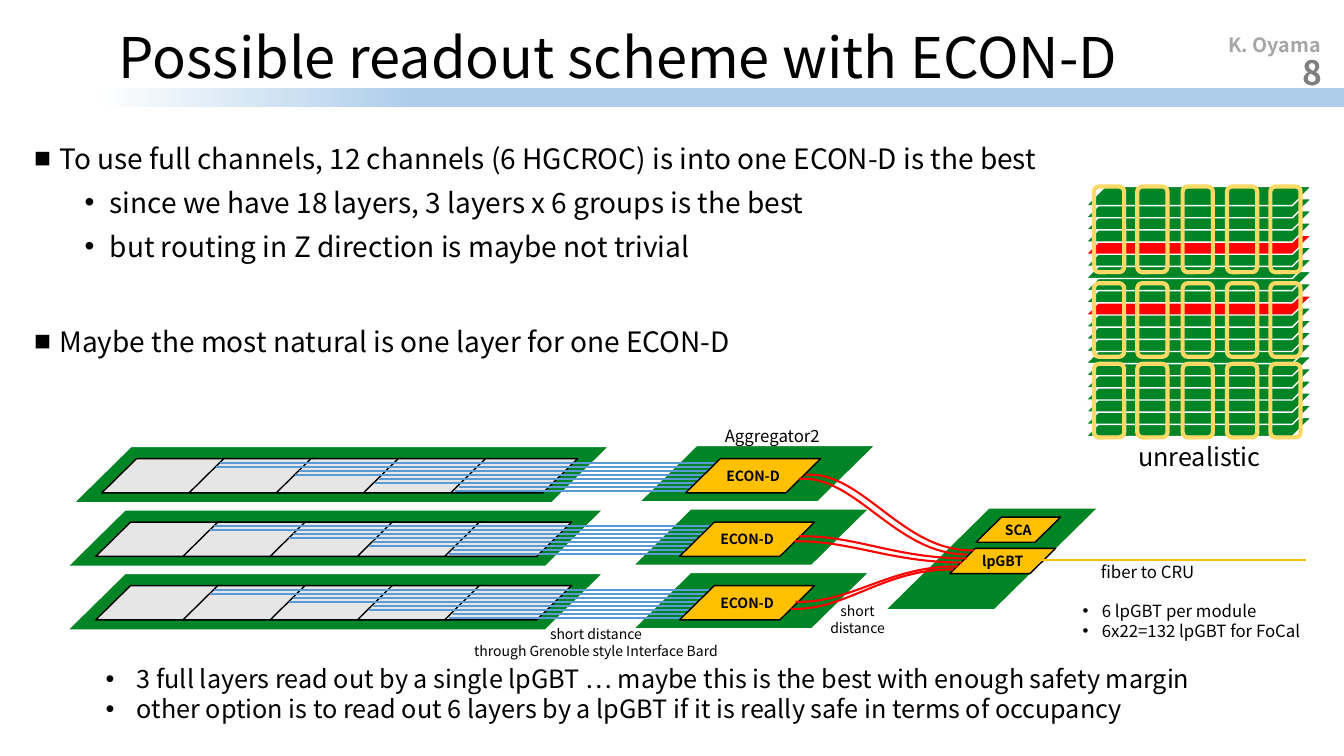
"""Build the ECON-D readout scheme slide."""
import pptx
import pptx.util
import pptx.dml.color
import pptx.enum.shapes
import pptx.enum.text
import lxml.etree

Inches, Pt = pptx.util.Inches, pptx.util.Pt
RGBColor = pptx.dml.color.RGBColor
Kind = pptx.enum.shapes.MSO_SHAPE
Align = pptx.enum.text.PP_ALIGN
Anchor = pptx.enum.text.MSO_ANCHOR
Fit = pptx.enum.text.MSO_AUTO_SIZE

FONT = "Noto Sans CJK JP"
BLACK = RGBColor(0, 0, 0)
WHITE = RGBColor(255, 255, 255)
GREEN = RGBColor(0x00, 0x85, 0x26)
RED = RGBColor(255, 0, 0)
GOLD = RGBColor(0xFF, 0xC0, 0x00)
PALE = RGBColor(0xFF, 0xD9, 0x66)
GREY = RGBColor(0xE7, 0xE6, 0xE6)
BLUE = RGBColor(0x5B, 0x9B, 0xD5)
SKY = RGBColor(0xAD, 0xCD, 0xEA)
SILVER = RGBColor(0xA6, 0xA6, 0xA6)
SLATE = RGBColor(0x80, 0x80, 0x80)

TITLE = "Possible readout scheme with ECON-D"
POINTS = [
    ("To use full channels, 12 channels (6 HGCROC) is into one ECON-D is the best", 0, 0),
    ("since we have 18 layers, 3 layers x 6 groups is the best", 1, 5),
    ("but routing in Z direction is maybe not trivial", 1, 5),
    ("Maybe the most natural is one layer for one ECON-D", 0, 41.5),
]
LEVELS = [("■", 0.25), ("•", 0.75)]
CORNER = [
    ("K. Oyama", (11.39, 0.29, 1.81, 0.31), 14, SILVER),
    ("8", (10.21, 0.52, 3, 0.4), 24, SLATE),
]
LABELS = [
    (["unrealistic"], (11.19, 4.33, 1.42, 0.4), 18, Align.LEFT),
    (["Aggregator2"], (7.09, 4.17, 1.15, 0.3), 12, Align.LEFT),
    (["fiber to CRU"], (10.82, 5.52, 1.16, 0.3), 12, Align.LEFT),
    (["short distance", "through Grenoble style Interface Bard"],
     (4.57, 6.16, 2.68, 0.44), 10, Align.CENTER),
    (["short", "distance"], (8.13, 5.93, 0.75, 0.44), 10, Align.CENTER),
]
LISTS = [
    (["3 full layers read out by a single lpGBT … maybe this is the best with enough safety margin",
      "other option is to read out 6 layers by a lpGBT if it is really safe in terms of occupancy"],
     (0.95, 6.53, 11.14, 0.71), 18, 0.31),
    (["6 lpGBT per module", "6x22=132 lpGBT for FoCal"],
     (10.64, 5.91, 2.44, 0.5), 12, 0.19),
]
PLATES, HOT = 20, (10, 15)
LOOP_X = (10.85, 11.28, 11.73, 12.17, 12.6)
LOOP_Y = [(1.85, 0.85), (2.81, 0.73), (3.61, 0.73)]
ROWS = [(0, 0), (-0.06, 0.63), (-0.06, 1.26)]
CELLS, WIRES = 5, 8
CURVES = [
    ((7.99, 4.71), (8.56, 4.67), (8.95, 5.48), (9.66, 5.46)),
    ((7.93, 4.75), (8.49, 4.71), (8.89, 5.51), (9.6, 5.5)),
    ((7.93, 5.32), (8.49, 5.31), (8.88, 5.54), (9.59, 5.54)),
    ((7.89, 5.97), (8.44, 5.99), (8.82, 5.61), (9.5, 5.62)),
    ((7.88, 5.37), (8.44, 5.36), (8.83, 5.58), (9.54, 5.58)),
    ((7.85, 6.04), (8.39, 6.06), (8.77, 5.64), (9.45, 5.65)),
]


def write(para, text, size, color=BLACK, bold=False):
    """Add one run to a paragraph."""
    run = para.add_run()
    run.text = text
    font = run.font
    font.name, font.size, font.bold = FONT, Pt(size), bold
    font.color.rgb = color


def bullet(para, mark, left, hang):
    """Give a paragraph a bullet and a hanging indent."""
    props = para._p.get_or_add_pPr()
    props.set("marL", str(Inches(left)))
    props.set("indent", str(-Inches(hang)))
    face = lxml.etree.SubElement(props, pptx.oxml.ns.qn("a:buFont"))
    face.set("typeface", "Arial")
    lxml.etree.SubElement(props, pptx.oxml.ns.qn("a:buChar")).set("char", mark)


def lines(frame, count):
    """Return the first paragraphs of a frame, adding those it lacks."""
    return [frame.paragraphs[0]] + [frame.add_paragraph() for _ in range(count - 1)]


def textbox(home, box, wrap=False):
    """Add a text box and return its frame."""
    frame = home.add_textbox(*map(Inches, box)).text_frame
    frame.word_wrap = wrap
    frame.auto_size = Fit.NONE if wrap else Fit.SHAPE_TO_FIT_TEXT
    return frame


def block(home, kind, box, fill, edge, width=1):
    """Add a preset shape with flat fill and line."""
    shape = home.add_shape(kind, *map(Inches, box))
    shape.shadow.inherit = False
    if fill is None:
        shape.fill.background()
    else:
        shape.fill.solid()
        shape.fill.fore_color.rgb = fill
    shape.line.color.rgb = edge
    shape.line.width = Pt(width)
    return shape


def slant(home, box, fill, edge=WHITE):
    """Add a leaning board."""
    shape = block(home, Kind.PARALLELOGRAM, box, fill, edge)
    shape.adjustments[0] = 1.016
    return shape


def chip(home, box, name):
    """Add a named gold chip."""
    frame = slant(home, box, GOLD, BLACK).text_frame
    frame.margin_left = frame.margin_right = frame.margin_top = frame.margin_bottom = 0
    frame.word_wrap = False
    frame.vertical_anchor = Anchor.MIDDLE
    para = frame.paragraphs[0]
    para.alignment = Align.CENTER
    write(para, name, 10, bold=True)


def wire(home, left, right, y, color):
    """Add a level line."""
    line = home.add_connector(pptx.enum.shapes.MSO_CONNECTOR.STRAIGHT,
                              Inches(left), Inches(y), Inches(right), Inches(y))
    line.line.color.rgb = color
    line.line.width = Pt(1.5)
    lxml.etree.SubElement(line._element.spPr, pptx.oxml.ns.qn("a:effectLst"))


def cable(home, knots):
    """Add an open outline made of one cubic curve."""
    spots = [tuple(map(Inches, knot)) for knot in knots]
    maker = home.build_freeform(*spots[0], scale=1.0)
    maker.add_line_segments(spots[-1:], close=False)
    shape = maker.convert_to_shape()
    leg = next(shape._element.iter(pptx.oxml.ns.qn("a:lnTo")))
    leg.tag = pptx.oxml.ns.qn("a:cubicBezTo")
    for place, (x, y) in enumerate(spots[1:3]):
        spot = lxml.etree.Element(pptx.oxml.ns.qn("a:pt"))
        spot.set("x", str(x - shape.left))
        spot.set("y", str(y - shape.top))
        leg.insert(place, spot)
    shape.shadow.inherit = False
    shape.fill.background()
    shape.line.color.rgb = RED
    shape.line.width = Pt(1.5)


def header(slide):
    """Place the bar, title and corner marks."""
    shapes = slide.shapes
    bar = block(shapes, Kind.RECTANGLE, (0, 0.87, 13.33, 0.19), SKY, SKY)
    bar.line.fill.background()
    bar.fill.gradient()
    bar.fill.gradient_angle = 0
    for stop, color, place in zip(bar.fill.gradient_stops, (WHITE, SKY), (0.07, 0.31)):
        stop.color.rgb, stop.position = color, place
    shapes._spTree.insert(2, bar._element)
    title = shapes.title
    title.left, title.top, title.width, title.height = map(Inches, (1.08, 0.15, 11.93, 0.9))
    title.text_frame.vertical_anchor = Anchor.MIDDLE
    para = title.text_frame.paragraphs[0]
    para.alignment, para.line_spacing = Align.LEFT, 0.9
    write(para, TITLE, 40)
    for text, box, size, color in CORNER:
        frame = textbox(shapes, box, True)
        frame.vertical_anchor = Anchor.MIDDLE
        frame.paragraphs[0].alignment = Align.RIGHT
        write(frame.paragraphs[0], text, size, color, True)


def stack(home):
    """Draw the pile of boards with its loops."""
    for i in range(PLATES):
        top = 4.14 - i * 2.29 / (PLATES - 1)
        slant(home, (10.77, top, 2.24, 0.19), RED if i in HOT else GREEN)
    for x in LOOP_X:
        for y, high in LOOP_Y:
            block(home, Kind.ROUNDED_RECTANGLE, (x, y, 0.3, high), None, PALE, 3)


def layer(home, dx, dy):
    """Draw one layer and its aggregator board."""
    slant(home, (6.34 + dx, 4.42 + dy, 2.34, 0.56), GREEN)
    slant(home, (0.73 + dx, 4.43 + dy, 5.31, 0.56), GREEN)
    for i in range(CELLS):
        slant(home, (1.01 + dx + 3.46 * i / 4, 4.55 + dy, 1.26, 0.34), GREY, BLACK)
    for i in range(WIRES):
        pair, odd = divmod(i, 2)
        wire(home, 2.18 + dx + 0.79 * pair - 0.04 * odd, 7.13 + dx, 4.59 + dy + 0.04 * i, BLUE)
    chip(home, (6.8 + dx, 4.55 + dy, 1.34, 0.34), "ECON-D")


def main():
    """Assemble and save the slide."""
    deck = pptx.Presentation()
    deck.slide_width, deck.slide_height = Inches(13.33), Inches(7.5)
    slide = deck.slides.add_slide(deck.slide_layouts[5])
    shapes = slide.shapes
    header(slide)
    frame = textbox(shapes, (0.24, 1.32, 11.5, 3.1), True)
    for para, (text, level, gap) in zip(lines(frame, len(POINTS)), POINTS):
        mark, left = LEVELS[level]
        bullet(para, mark, left, 0.25)
        para.level, para.line_spacing, para.space_before = level, 1.1, Pt(gap)
        write(para, text, 20)
    stack(shapes.add_group_shape().shapes)
    for dx, dy in ROWS:
        layer(shapes.add_group_shape().shapes, dx, dy)
    slant(shapes, (8.78, 5.04, 2.11, 1.01), GREEN)
    chip(shapes, (9.42, 5.44, 1.05, 0.25), "lpGBT")
    for knots in CURVES:
        cable(shapes, knots)
    chip(shapes, (9.68, 5.13, 0.84, 0.25), "SCA")
    wire(shapes, 10.33, 12.95, 5.56, GOLD)
    for texts, box, size, align in LABELS:
        for para, text in zip(lines(textbox(shapes, box), len(texts)), texts):
            para.alignment = align
            write(para, text, size)
    for texts, box, size, hang in LISTS:
        for para, text in zip(lines(textbox(shapes, box), len(texts)), texts):
            bullet(para, "•", hang, hang)
            write(para, text, size)
    deck.save("out.pptx")


if __name__ == "__main__":
    main()
